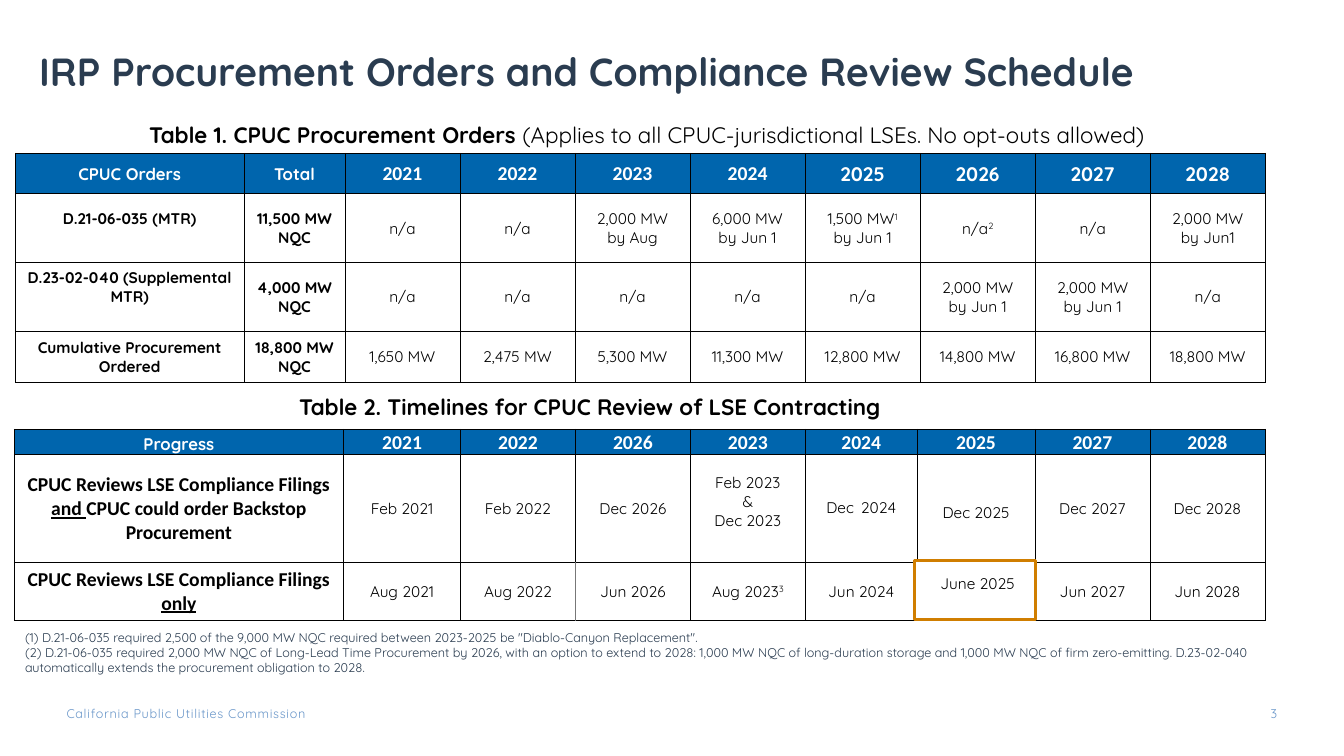
from lxml import etree
from pptx import Presentation
from pptx.dml.color import RGBColor
from pptx.enum.shapes import MSO_SHAPE
from pptx.enum.text import MSO_ANCHOR, PP_ALIGN
from pptx.oxml.ns import qn
from pptx.util import Pt

TOP, MIDDLE, BOTTOM = MSO_ANCHOR.TOP, MSO_ANCHOR.MIDDLE, MSO_ANCHOR.BOTTOM
LEFT, CENTER, RIGHT = PP_ALIGN.LEFT, PP_ALIGN.CENTER, PP_ALIGN.RIGHT
RECTANGLE = MSO_SHAPE.RECTANGLE
COLORS = {
    "navy": "2A3C50", "footer": "6996C9", "header": "0065AD", "white": "FFFFFF",
    "black": "000000", "gray": "777777", "highlight": "D07E00",
}
SANS, ROUNDED = "Calibri", "Quicksand"
CELL_INSET = 0.7

ORDERS_COLUMNS = [163.4, 72] + [82.2] * 8
ORDERS_ROWS = [29, 49, 49, 36.5]
ORDERS = [
    ["CPUC Orders", "Total", "2021", "2022", "2023", "2024", "2025", "2026", "2027", "2028"],
    ["D.21-06-035 (MTR)", "11,500 MW NQC", "n/a", "n/a", "2,000 MW\vby Aug", "6,000 MW\vby Jun 1",
     [("1,500 MW", None), ("1", "super"), ("\vby Jun 1", None)],
     [("n/a", None), ("2", "super")], "n/a", "2,000 MW\vby Jun1"],
    ["D.23-02-040 (Supplemental MTR)", "4,000 MW NQC", "n/a", "n/a", "n/a", "n/a", "n/a",
     "2,000 MW\vby Jun 1", "2,000 MW\vby Jun 1", "n/a"],
    ["Cumulative Procurement Ordered", "18,800 MW NQC", "1,650 MW", "2,475 MW", "5,300 MW",
     "11,300 MW", "12,800 MW", "14,800 MW", "16,800 MW", "18,800 MW"],
]

TIMELINE_COLUMNS = [235.4, 83.5, 82.1, 82.1, 82.1, 79.9, 84.2, 82.1, 82.1]
TIMELINE_ROWS = [18, 77, 41.5]
TIMELINE = [
    ["Progress", "2021", "2022", "2026", "2023", "2024", "2025", "2027", "2028"],
    [[("CPUC Reviews LSE Compliance Filings ", None), ("and ", "underline"),
      ("CPUC could order Backstop Procurement", None)],
     "Feb 2021", "Feb 2022", "Dec 2026", "Feb 2023\v&\vDec 2023",
     [("Dec", None), (" ", "wide"), ("2024", None)], "Dec 2025", "Dec 2027", "Dec 2028"],
    [[("CPUC Reviews LSE Compliance Filings ", None), ("only", "underline")],
     "Aug 2021", "Aug 2022", "Jun 2026", [("Aug 2023", None), ("3", "super")],
     "Jun 2024", "", "Jun 2027", "Jun 2028"],
]
FOOTNOTES = [
    '(1) D.21-06-035 required 2,500 of the 9,000 MW NQC required between 2023-2025 be '
    '"Diablo-Canyon Replacement".',
    "(2) D.21-06-035 required 2,000 MW NQC of Long-Lead Time Procurement by 2026, with an option "
    "to extend to 2028: 1,000 MW NQC of long-duration storage and 1,000 MW NQC of firm "
    "zero-emitting. D.23-02-040 automatically extends the procurement obligation to 2028.",
]


def color(name):
    return RGBColor.from_string(COLORS[name])


def set_font(font, size, name, color_name, bold=False):
    font.size, font.name, font.bold = Pt(size), name, bold
    font.color.rgb = color(color_name)


def set_insets(frame, left, top, right, bottom):
    frame.margin_left, frame.margin_top = Pt(left), Pt(top)
    frame.margin_right, frame.margin_bottom = Pt(right), Pt(bottom)


def add_text(slide, box, lines, size, color_name, bold=False, align=LEFT, anchor=TOP,
             insets=(7.2, 3.6, 7.2, 3.6)):
    frame = slide.shapes.add_textbox(*map(Pt, box)).text_frame
    frame.word_wrap, frame.vertical_anchor = True, anchor
    set_insets(frame, *insets)
    frame.text = "\n".join(lines)
    for paragraph in frame.paragraphs:
        paragraph.alignment = align
        set_font(paragraph.font, size, ROUNDED, color_name, bold)
    return frame


def set_border(cell, side, color_name="black", width=0.5):
    properties = cell._tc.get_or_add_tcPr()
    tag = qn("a:ln" + side)
    for old_line in properties.findall(tag):
        properties.remove(old_line)
    line = etree.Element(tag, w=str(Pt(width)))
    fill = etree.SubElement(line, qn("a:solidFill"))
    etree.SubElement(fill, qn("a:srgbClr"), val=COLORS[color_name])
    properties.insert("LRTB".index(side), line)


def fill_cell(cell, content, size, name, color_name, bold):
    """Write a string, or a list of (text, style) parts, into a cell."""
    paragraph = cell.text_frame.paragraphs[0]
    paragraph.alignment = CENTER
    set_font(paragraph.font, size, name, color_name, bold)
    if isinstance(content, str):
        paragraph.text = content
        return
    for text, style in content:
        if text.startswith("\v"):
            paragraph.add_line_break()
        run = paragraph.add_run()
        run.text = text.lstrip("\v")
        if style == "super":
            run._r.get_or_add_rPr().set("baseline", "30000")
        elif style == "underline":
            run.font.underline = True
        elif style == "wide":
            run.font.size = Pt(18)


def add_grid(slide, left, top, widths, heights, contents, text_style, header_anchor):
    """Add a bordered table; text_style(row, column) gives size, font and bold."""
    frame = slide.shapes.add_table(len(heights), len(widths), Pt(left), Pt(top),
                                   Pt(sum(widths)), Pt(sum(heights)))
    table = frame.table
    table.first_row = table.horz_banding = False
    for column, width in zip(table.columns, widths):
        column.width = Pt(width)
    for row, height in zip(table.rows, heights):
        row.height = Pt(height)
    for row, values in enumerate(contents):
        for column, content in enumerate(values):
            cell = table.cell(row, column)
            set_insets(cell, CELL_INSET, CELL_INSET, CELL_INSET, 0)
            cell.vertical_anchor = MIDDLE if row else header_anchor
            if row:
                cell.fill.background()
            else:
                cell.fill.solid()
                cell.fill.fore_color.rgb = color("header")
            for side in "LRTB":
                set_border(cell, side)
            size, name, bold = text_style(row, column)
            fill_cell(cell, content, size, name, "black" if row else "white", bold)
    return table


def orders_style(row, column):
    if row:
        return 11, ROUNDED, column < 2
    return (12 if column < 2 else 14), (SANS if 2 <= column <= 5 else ROUNDED), True


def timeline_style(row, column):
    if row and column:
        return 11, ROUNDED, False
    return (14, SANS, True) if row or column else (12, ROUNDED, True)


def add_orders(slide, left, top):
    caption = add_text(slide, (left + 88.4, top - 26.6, 812, 26.6),
                       ["Table 1. CPUC Procurement Orders "], 16, "black", True)
    paragraph = caption.paragraphs[0]
    note = paragraph.add_run()
    note.text = "(Applies to all CPUC-jurisdictional LSEs. No opt-outs allowed)"
    note.font.bold = False
    table = add_grid(slide, left, top, ORDERS_COLUMNS, ORDERS_ROWS, ORDERS, orders_style, MIDDLE)
    for row in (1, 2):
        table.cell(row, 0).margin_bottom = Pt(14)


def add_timeline(slide, left, top):
    add_text(slide, (left + 196.5, top - 29.5, 446.4, 26.6),
             ["Table 2. Timelines for CPUC Review of LSE Contracting"], 16, "black", True)
    table = add_grid(slide, left, top, TIMELINE_COLUMNS, TIMELINE_ROWS, TIMELINE,
                     timeline_style, BOTTOM)
    table.cell(1, 4).margin_bottom = Pt(10)
    table.cell(1, 5).margin_bottom = Pt(7)
    table.cell(1, 6).margin_top = Pt(6)
    set_border(table.cell(2, 2), "R", "gray", 1)
    set_border(table.cell(2, 3), "L", "gray", 1)
    add_highlight(slide, (left + 643, top + 93.6, 86.4, 42.5))


def add_highlight(slide, box):
    shape = slide.shapes.add_shape(RECTANGLE, *map(Pt, box))
    shape.shadow.inherit = False
    shape.fill.solid()
    shape.fill.fore_color.rgb = color("white")
    shape.line.color.rgb = color("highlight")
    shape.line.width = Pt(2.25)
    frame = shape.text_frame
    frame.word_wrap, frame.vertical_anchor = True, TOP
    set_insets(frame, 11.2, 10, 7.2, 3.6)
    fill_cell(shape, "June 2025", 11, ROUNDED, "black", False)


def add_footer(slide, top):
    organization = add_text(slide, (47.5, top, 231, 11), ["California Public Utilities Commission"],
                            9, "footer", insets=(0, 0, 0, 0))
    organization.paragraphs[0].runs[0]._r.get_or_add_rPr().set("spc", "50")
    add_text(slide, (882, top, 30.2, 14.4), ["3"], 9, "footer", align=RIGHT, insets=(0, 0, 0, 0))


def main():
    presentation = Presentation()
    presentation.slide_width, presentation.slide_height = Pt(960), Pt(540)
    slide = presentation.slides.add_slide(presentation.slide_layouts[6])
    title = add_text(slide, (28, 28, 932, 43.2),
                     ["IRP Procurement Orders and Compliance Review Schedule"], 28, "navy", True,
                     anchor=BOTTOM, insets=(0, 3.6, 7.2, 3.6))
    title.paragraphs[0].line_spacing = 0.9
    add_orders(slide, 11, 109.4)
    add_timeline(slide, 10.1, 306.5)
    add_text(slide, (10.8, 446.4, 938, 40.3), FOOTNOTES, 9, "navy")
    add_footer(slide, 504)
    presentation.save("out.pptx")


if __name__ == "__main__":
    main()
